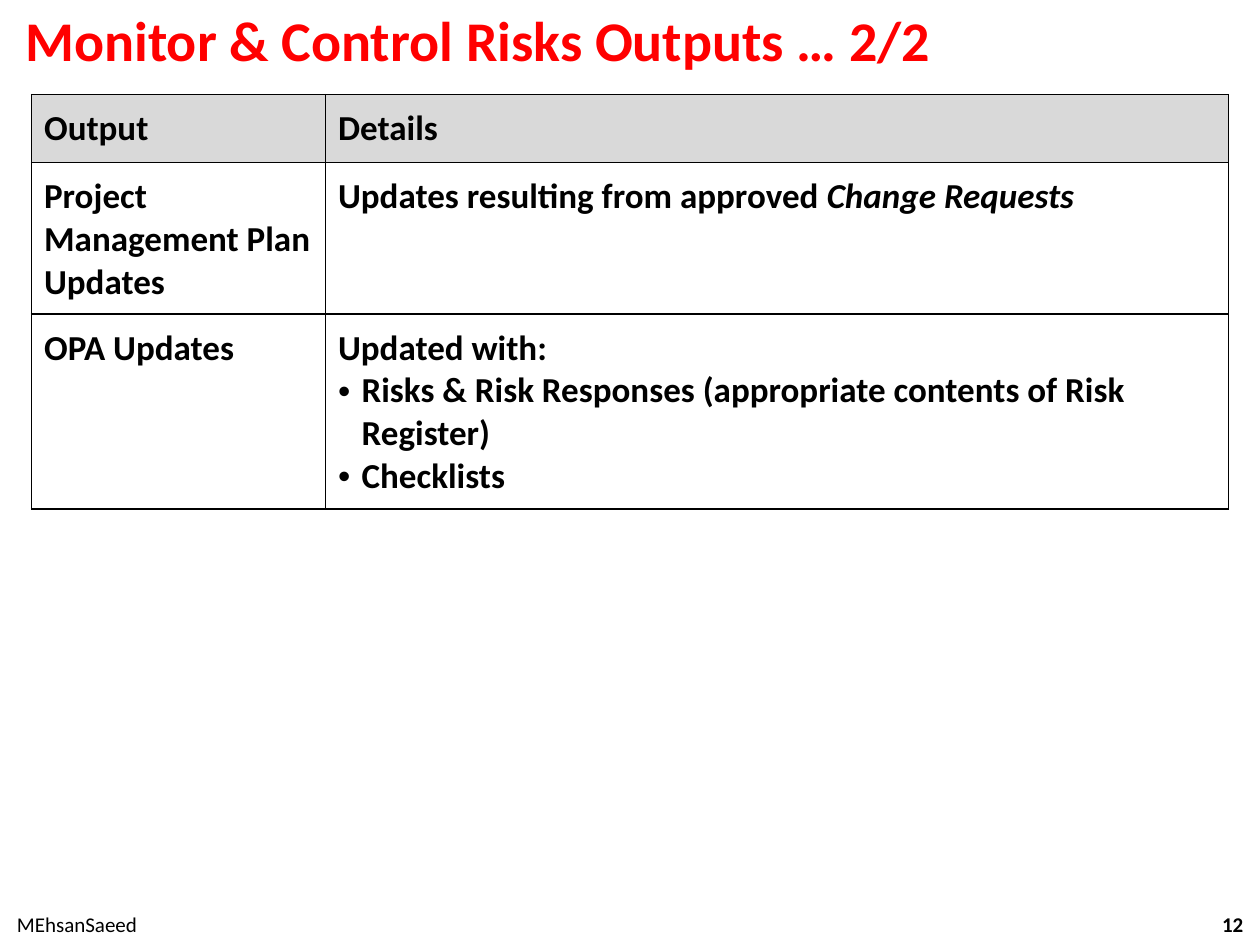
from pptx import Presentation
from pptx import util as u
from pptx.dml.color import RGBColor
from pptx.enum import text
from pptx.oxml import parse_xml
from pptx.oxml.ns import nsdecls

BLACK = RGBColor(0x00, 0x00, 0x00)
RED = RGBColor(0xFF, 0x00, 0x00)
GRAY = RGBColor(0xD9, 0xD9, 0xD9)

presentation = Presentation()
presentation.slide_width = u.Pt(720)
presentation.slide_height = u.Pt(540)
slide = presentation.slides.add_slide(presentation.slide_layouts[6])


def format_paragraph(paragraph, size, color=BLACK, bold=True):
    for run in paragraph.runs:
        run.font.name = "Calibri"
        run.font.size = u.Pt(size)
        run.font.bold = bold
        run.font.color.rgb = color


def add_label(words, box, size, alignment, color=BLACK, bold=True):
    shape = slide.shapes.add_textbox(*[u.Pt(length) for length in box])
    frame = shape.text_frame
    frame.word_wrap = True
    frame.vertical_anchor = text.MSO_ANCHOR.MIDDLE
    frame.text = words
    paragraph = frame.paragraphs[0]
    paragraph.alignment = alignment
    format_paragraph(paragraph, size, color, bold)
    return frame


title = add_label("Monitor & Control Risks Outputs … 2/2", (0, 0, 720, 45),
                  32, text.PP_ALIGN.LEFT, RED)
title.margin_left = u.Pt(14.4)
title.margin_right = title.margin_top = title.margin_bottom = 0
add_label("12", (549.5, 513.5, 168, 28.8), 12, text.PP_ALIGN.RIGHT)

outputs = [["Output", "Details"],
           ["Project Management Plan Updates",
            "Updates resulting from approved "]]
assets = [["OPA Updates",
           "Updated with:\n"
           "Risks & Risk Responses (appropriate contents of Risk Register)\n"
           "Checklists"]]
tables = []
for top, heights, rows in [(54, (38.8, 86), outputs), (179.5, (111.5,), assets)]:
    frame = slide.shapes.add_table(len(rows), 2, u.Pt(18), u.Pt(top),
                                   u.Pt(684), u.Pt(sum(heights)))
    table = frame.table
    table.first_row = False
    table.horz_banding = False
    for column, width in zip(table.columns, (168, 516)):
        column.width = u.Pt(width)
    for row, height, entries in zip(table.rows, heights, rows):
        row.height = u.Pt(height)
        for cell, entry in zip(row.cells, entries):
            cell.text_frame.text = entry
            cell.margin_left = cell.margin_right = u.Pt(7.2)
            cell.margin_top = cell.margin_bottom = u.Pt(7.2)
            properties = cell._tc.get_or_add_tcPr()
            for side in ("lnL", "lnR", "lnT", "lnB"):
                properties.append(parse_xml(
                    f'<a:{side} {nsdecls("a")} w="{u.Pt(1)}"><a:solidFill>'
                    f'<a:srgbClr val="{BLACK}"/></a:solidFill></a:{side}>'))
            cell.fill.background()
    tables.append(table)

outputs_table, assets_table = tables
for cell in outputs_table.rows[0].cells:
    cell.fill.solid()
    cell.fill.fore_color.rgb = GRAY
    cell.vertical_anchor = text.MSO_ANCHOR.BOTTOM

emphasis = outputs_table.cell(1, 1).text_frame.paragraphs[0].add_run()
emphasis.text = "Change Requests"
emphasis.font.italic = True

for paragraph in assets_table.cell(0, 1).text_frame.paragraphs[1:]:
    properties = paragraph._p.get_or_add_pPr()
    properties.set("marL", str(u.Pt(13.5)))
    properties.set("indent", str(-u.Pt(13.5)))
    properties.append(parse_xml(f'<a:buFont {nsdecls("a")} typeface="Arial"/>'))
    properties.append(parse_xml(f'<a:buChar {nsdecls("a")} char="•"/>'))

for table in tables:
    for cell in table.iter_cells():
        for paragraph in cell.text_frame.paragraphs:
            format_paragraph(paragraph, 20)

add_label("MEhsanSaeed", (-1, 513.5, 90, 28.8), 12, text.PP_ALIGN.CENTER, bold=False)

presentation.save("out.pptx")
